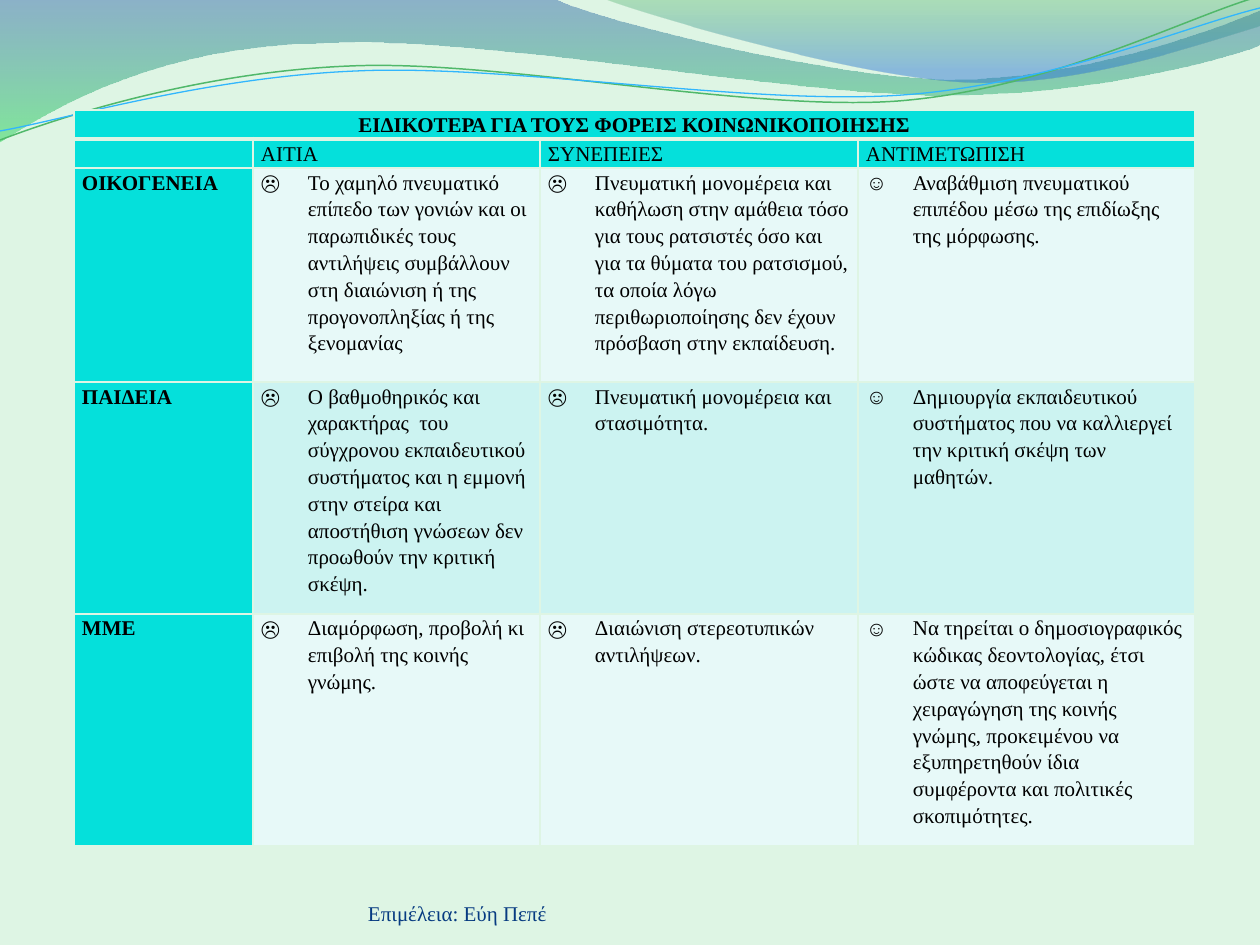
"""Build a slide with a table on causes, consequences and remedies by agent of socialisation."""
from lxml import etree
from pptx import Presentation
from pptx.dml.color import RGBColor
from pptx.enum.text import MSO_ANCHOR, PP_ALIGN
from pptx.oxml.ns import qn
from pptx.util import Pt

CENTER = PP_ALIGN.CENTER
LEFT = PP_ALIGN.LEFT
BOTTOM = MSO_ANCHOR.BOTTOM
PX = 914400 // 126
FONT = "Times New Roman"
PALE, TURQUOISE = "DEF5E4", "05E0DB"
BANDS = ["E7F9F8", "CCF3F1", "E7F9F8"]
SAD, HAPPY = "☹", "☺"


def rgb(value):
    return RGBColor.from_string(value)


def add_curve(shapes, start, segments, closed):
    points = [pair for segment in segments for pair in zip(segment[::2], segment[1::2])]
    builder = shapes.build_freeform(*start, scale=PX)
    builder.add_line_segments(points, close=closed)
    curve = builder.convert_to_shape()
    curve.shadow.inherit = False
    lines = iter(list(curve._element.iter(qn("a:lnTo"))))
    for segment in segments:
        line = next(lines)
        if len(segment) == 6:
            line.addprevious(bezier := etree.Element(qn("a:cubicBezTo")))
            for corner in (line, next(lines), next(lines)):
                bezier.append(corner[0])
                corner.getparent().remove(corner)
    return curve


prs = Presentation()
prs.slide_width, prs.slide_height = 1260 * PX, 945 * PX
slide = prs.slides.add_slide(prs.slide_layouts[6])
slide.background.fill.solid()
slide.background.fill.fore_color.rgb = rgb(PALE)

waves = [
    ((0, 0),
     [(554, -1), (600, 21, 837, 79, 955, 79), (1075, 79, 1207, 33, 1260, 11),
      (1261, 45), (1239, 55, 1096, 96, 940, 95), (784, 95, 481, 35, 324, 43),
      (163, 45, 58, 105, -1, 142)],
     [(0, "2960A7", 45), (1, "35DA5E", 55)]),
    ((604, -1),
     [(641, 14, 859, 78, 969, 82), (1081, 87, 1211, 40, 1260, 26), (1260, 0)],
     [(0, "36A752", 30), (0.8, "2472D3", 45)]),
]
for start, segments, stops in waves:
    wave = add_curve(slide.shapes, start, segments, True)
    wave.line.fill.background()
    wave.fill.gradient()
    wave.fill.gradient_angle = 270
    for stop, (position, color, opacity) in zip(wave.fill.gradient_stops, stops):
        stop.position = position
        stop.color.rgb = rgb(color)
    for tint, (position, color, opacity) in zip(wave.fill._xPr.iter(qn("a:srgbClr")), stops):
        etree.SubElement(tint, qn("a:alpha"), val=str(opacity * 1000))

strands = [
    ((0, 140), [(60, 117, 199, 72, 349, 66), (498, 59, 747, 112, 898, 101),
                (1050, 89, 1182, 19, 1257, -3)], "50B86A", 0.85),
    ((0, 131), [(59, 121, 206, 77, 357, 71), (508, 64, 752, 106, 903, 95),
                (1053, 84, 1186, 26, 1260, 8)], "31B6FD", 0.75),
]
for start, segments, color, width in strands:
    strand = add_curve(slide.shapes, start, segments, False)
    strand.fill.background()
    strand.line.color.rgb = rgb(color)
    strand.line.width = Pt(width)

credit = slide.shapes.add_textbox(368 * PX, 876 * PX, 462 * PX, 50 * PX).text_frame
credit.word_wrap = True
credit.vertical_anchor = BOTTOM
credit.margin_left = credit.margin_right = credit.margin_top = credit.margin_bottom = 0
author = credit.paragraphs[0].add_run()
author.text = "Επιμέλεια: Εύη Πεπέ"
author.font.name, author.font.size = FONT, Pt(12)
author.font.color.rgb = rgb("073B81")

rows = [
    ["ΕΙΔΙΚΟΤΕΡΑ ΓΙΑ ΤΟΥΣ ΦΟΡΕΙΣ ΚΟΙΝΩΝΙΚΟΠΟΙΗΣΗΣ", "", "", ""],
    ["", "ΑΙΤΙΑ", "ΣΥΝΕΠΕΙΕΣ", "ΑΝΤΙΜΕΤΩΠΙΣΗ"],
    ["ΟΙΚΟΓΕΝΕΙΑ",
     "Το χαμηλό πνευματικό επίπεδο των γονιών και οι παρωπιδικές τους αντιλήψεις "
     "συμβάλλουν στη διαιώνιση ή της προγονοπληξίας ή της ξενομανίας",
     "Πνευματική μονομέρεια και καθήλωση στην αμάθεια τόσο για τους ρατσιστές όσο και "
     "για τα θύματα του ρατσισμού, τα οποία λόγω περιθωριοποίησης δεν έχουν πρόσβαση "
     "στην εκπαίδευση.",
     "Αναβάθμιση πνευματικού επιπέδου μέσω της επιδίωξης της μόρφωσης."],
    ["ΠΑΙΔΕΙΑ",
     "Ο βαθμοθηρικός και χαρακτήρας  του σύγχρονου εκπαιδευτικού συστήματος και η εμμονή "
     "στην στείρα και αποστήθιση γνώσεων δεν προωθούν την κριτική σκέψη.",
     "Πνευματική μονομέρεια και στασιμότητα.",
     "Δημιουργία εκπαιδευτικού συστήματος που να καλλιεργεί την κριτική σκέψη των μαθητών."],
    ["ΜΜΕ",
     "Διαμόρφωση, προβολή κι επιβολή της κοινής γνώμης.",
     "Διαιώνιση στερεοτυπικών αντιλήψεων.",
     "Να τηρείται ο δημοσιογραφικός κώδικας δεοντολογίας, έτσι ώστε να αποφεύγεται η "
     "χειραγώγηση της κοινής γνώμης, προκειμένου να εξυπηρετηθούν ίδια συμφέροντα και "
     "πολιτικές σκοπιμότητες."],
]
widths = [179, 287, 318, 337]
heights = [26, 26, 214, 214, 214]
agents = slide.shapes.add_table(len(rows), len(widths), 74 * PX, 110 * PX,
                                sum(widths) * PX, sum(heights) * PX).table
agents.first_row = agents.horz_banding = False
for column, width in zip(agents.columns, widths):
    column.width = width * PX
for row, height in zip(agents.rows, heights):
    row.height = height * PX

for r, entries in enumerate(rows):
    for c, entry in enumerate(entries):
        cell = agents.cell(r, c)
        cell.margin_left = cell.margin_right = 8 * PX
        cell.margin_top = cell.margin_bottom = 0
        for side in ("L", "R", "T", "B"):
            thick = (r, side) in ((0, "B"), (1, "T"))
            border = etree.SubElement(cell._tc.get_or_add_tcPr(), qn(f"a:ln{side}"),
                                      w=str(Pt(3 if thick else 1)))
            paint = etree.SubElement(border, qn("a:solidFill"))
            etree.SubElement(paint, qn("a:srgbClr"), val=PALE)
        cell.fill.solid()
        cell.fill.fore_color.rgb = rgb(TURQUOISE if r < 2 or c == 0 else BANDS[r - 2])

        paragraph = cell.text_frame.paragraphs[0]
        paragraph.line_spacing = 1.15
        paragraph.alignment = CENTER if r == 0 else LEFT
        if r > 1 and c > 0:
            properties = paragraph._p.get_or_add_pPr()
            properties.set("marL", str(47 * PX))
            properties.set("indent", str(-47 * PX))
            etree.SubElement(properties, qn("a:buFont"), typeface=FONT)
            etree.SubElement(properties, qn("a:buChar"), char=HAPPY if c == 3 else SAD)
        if entry:
            run = paragraph.add_run()
            run.text = entry
            run.font.name, run.font.size = FONT, Pt(12)
            run.font.bold = r == 0 or c == 0
            run.font.color.rgb = rgb("000000")
        ending = etree.SubElement(paragraph._p, qn("a:endParaRPr"), sz="1200")
        etree.SubElement(ending, qn("a:latin"), typeface=FONT)
agents.cell(0, 0).merge(agents.cell(0, 3))

prs.save("out.pptx")
